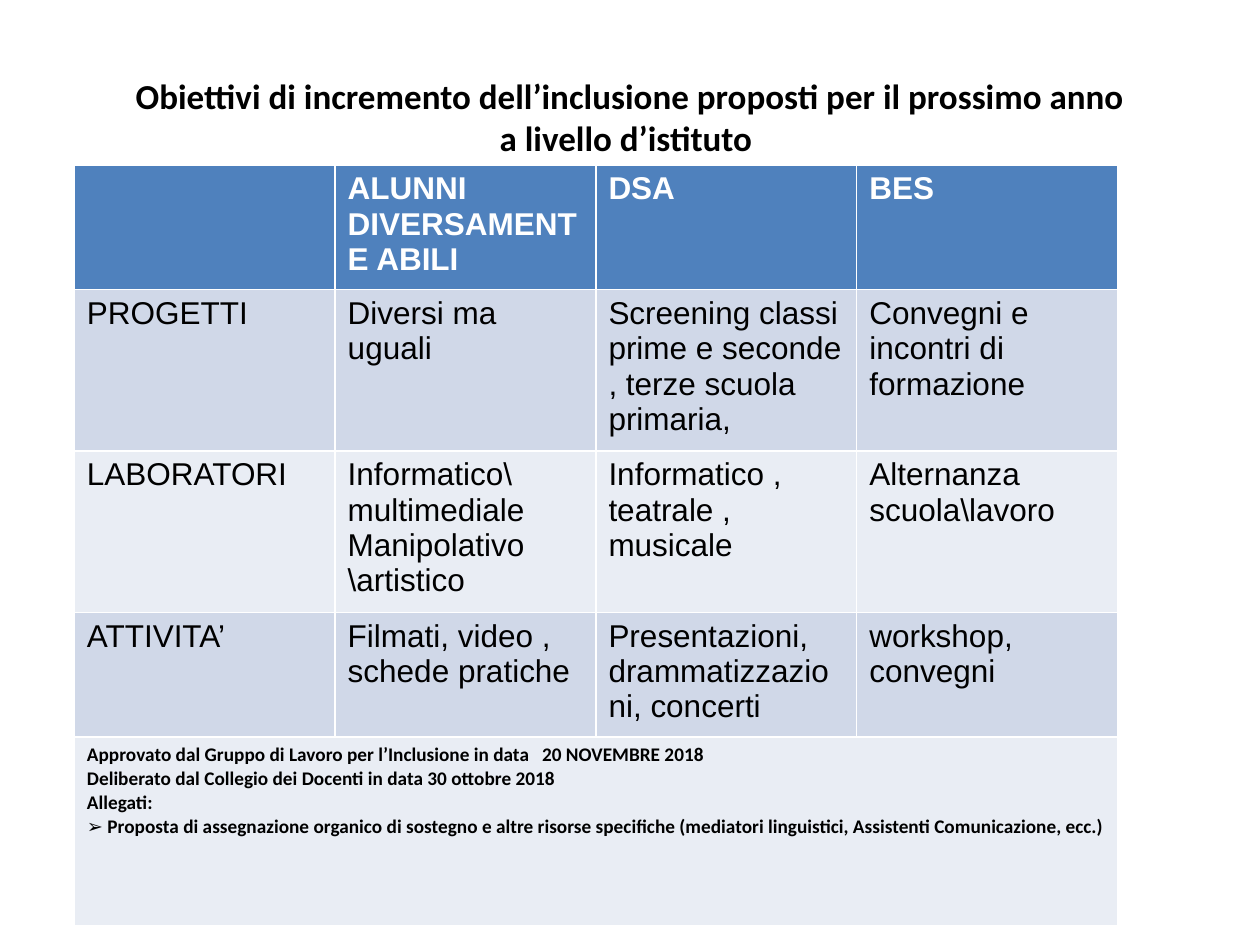
from pptx import Presentation
from pptx.dml.color import RGBColor
from pptx.enum import text
from pptx.util import Inches, Pt

BLACK = RGBColor(0x00, 0x00, 0x00)
WHITE = RGBColor(0xFF, 0xFF, 0xFF)
HEADER_BLUE = RGBColor(0x4F, 0x81, 0xBD)
BANDS = (RGBColor(0xE9, 0xED, 0xF4), RGBColor(0xD0, 0xD8, 0xE8))

HEADING = ("Obiettivi di incremento dell’inclusione proposti per il prossimo anno",
           "a livello d’istituto ")
GOALS = [
    ["", "ALUNNI DIVERSAMENTE ABILI", "DSA", "BES"],
    ["PROGETTI", "Diversi ma uguali",
     "Screening classi prime e seconde , terze scuola primaria,",
     "Convegni e incontri di formazione"],
    ["LABORATORI", "Informatico\\ multimediale\nManipolativo \\artistico",
     "Informatico , teatrale , musicale", "Alternanza scuola\\lavoro"],
    ["ATTIVITA’", "Filmati, video , schede pratiche",
     "Presentazioni, drammatizzazioni, concerti", "workshop, convegni"],
]
APPROVAL = [
    [("Approvato dal Gruppo di Lavoro per l’Inclusione in data   20 NOVEMBRE 2018", True)],
    [("Deliberato dal Collegio dei Docenti in data 30 ottobre 2018", True)],
    [("Allegati:", True)],
    [("➢ ", False),
     ("Proposta di assegnazione organico di sostegno e altre risorse specifiche "
      "(mediatori linguistici, Assistenti Comunicazione, ecc.)", True)],
]
COLUMN_WIDTH = 2.07
ROW_HEIGHTS = (0.99, 1.28, 1.28, 0.99, 1.5)


def add_run(paragraph, wording, size, face, color, bold):
    run = paragraph.add_run()
    run.text = wording
    run.font.size = Pt(size)
    run.font.name = face
    run.font.color.rgb = color
    run.font.bold = bold


def write_cell(cell, paragraphs, size, face, color):
    frame = cell.text_frame
    for number, runs in enumerate(paragraphs):
        paragraph = frame.add_paragraph() if number else frame.paragraphs[0]
        for wording, bold in runs:
            add_run(paragraph, wording, size, face, color, bold)


def fill_cell(cell, color):
    cell.fill.solid()
    cell.fill.fore_color.rgb = color


def add_heading(slide):
    heading = slide.shapes.title
    heading.left, heading.top = Inches(0.5), Inches(0.3)
    heading.width, heading.height = Inches(9), Inches(1.25)
    heading.text_frame.vertical_anchor = text.MSO_ANCHOR.MIDDLE
    paragraph = heading.text_frame.paragraphs[0]
    paragraph.alignment = text.PP_ALIGN.CENTER
    for number, line in enumerate(HEADING):
        if number:
            paragraph.add_line_break()
        add_run(paragraph, line, 20, "Calibri", BLACK, True)


def add_goals(slide):
    columns = len(GOALS[0])
    goals = slide.shapes.add_table(
        len(ROW_HEIGHTS), columns, Inches(0.59), Inches(1.31),
        Inches(COLUMN_WIDTH * columns), Inches(sum(ROW_HEIGHTS))).table
    for column in goals.columns:
        column.width = Inches(COLUMN_WIDTH)
    for row, height in zip(goals.rows, ROW_HEIGHTS):
        row.height = Inches(height)

    for r, entries in enumerate(GOALS):
        header = r == 0
        for c, entry in enumerate(entries):
            cell = goals.cell(r, c)
            fill_cell(cell, HEADER_BLUE if header else BANDS[r % 2])
            if entry:
                paragraphs = [[(line, header)] for line in entry.split("\n")]
                write_cell(cell, paragraphs, 18, "Arial", WHITE if header else BLACK)

    last = len(GOALS)
    approval = goals.cell(last, 0)
    approval.merge(goals.cell(last, columns - 1))
    fill_cell(approval, BANDS[last % 2])
    write_cell(approval, APPROVAL, 11, "Calibri", BLACK)


def main():
    deck = Presentation()
    deck.slide_width, deck.slide_height = Inches(10), Inches(7.5)
    slide = deck.slides.add_slide(deck.slide_layouts.get_by_name("Title Only"))
    add_heading(slide)
    add_goals(slide)
    deck.save("out.pptx")


if __name__ == "__main__":
    main()
